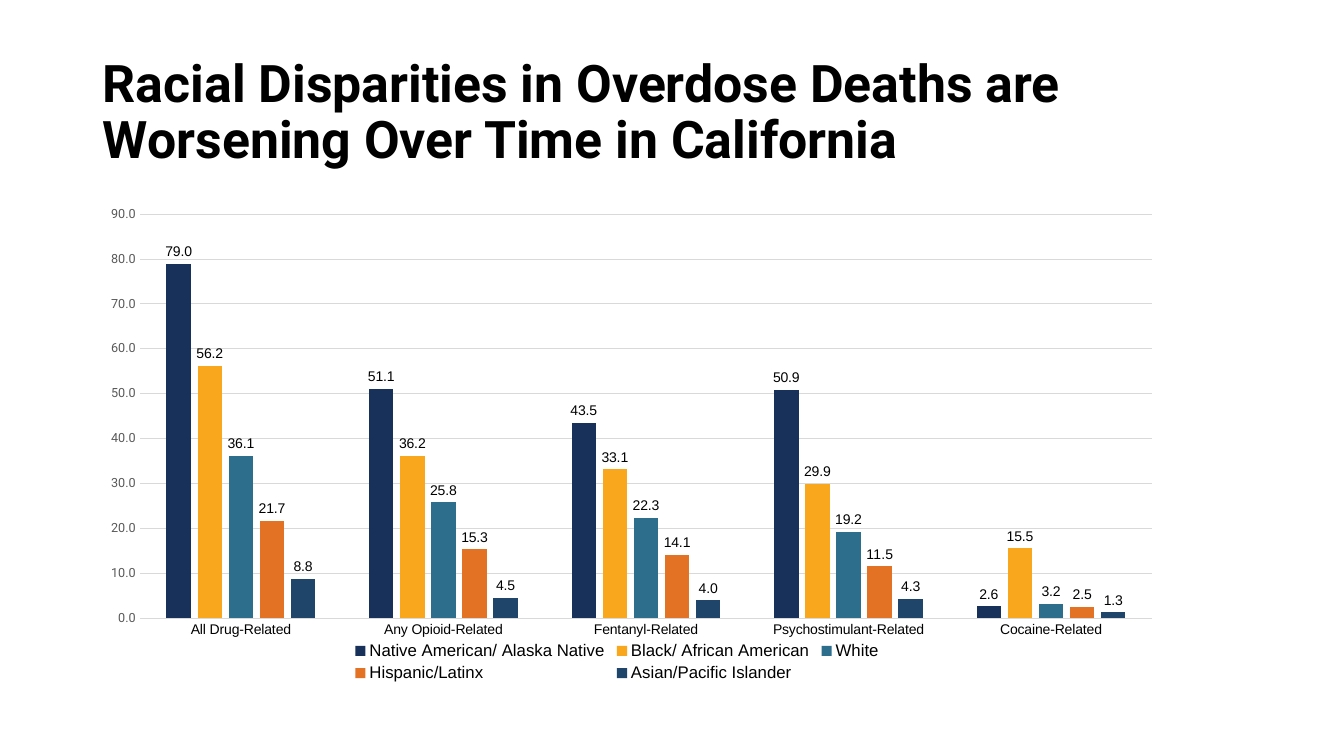
from dataclasses import dataclass

from lxml import etree
from pptx import Presentation
from pptx import util as u
from pptx.chart.data import CategoryChartData
from pptx.dml.color import RGBColor
from pptx.enum import chart as chart_enum
from pptx.enum import text
from pptx.oxml import ns


@dataclass(frozen=True)
class Theme:
    ink: str = "000000"
    muted: str = "595959"
    rule: str = "D9D9D9"
    heading_font: str = "Roboto"
    label_font: str = "Arial"
    title_size: float = 37
    legend_size: float = 12
    label_size: float = 10
    scale_size: float = 9
    rule_width: float = 0.75


THEME = Theme()
TITLE = "Racial Disparities in Overdose Deaths are Worsening Over Time in California"
CATEGORIES = ["All Drug-Related", "Any Opioid-Related", "Fentanyl-Related",
              "Psychostimulant-Related", "Cocaine-Related"]
# Group name, bar colour, death rate per category
GROUPS = [
    ("Native American/ Alaska Native", "17315A", (79, 51.1, 43.5, 50.9, 2.6)),
    ("Black/ African American", "F9A71C", (56.2, 36.2, 33.1, 29.9, 15.5)),
    ("White", "2D6E8D", (36.1, 25.8, 22.3, 19.2, 3.2)),
    ("Hispanic/Latinx", "E47225", (21.7, 15.3, 14.1, 11.5, 2.5)),
    ("Asian/Pacific Islander", "1F456B", (8.8, 4.5, 4, 4.3, 1.3)),
]


def style_font(font, size, name, color=THEME.ink, bold=False):
    font.size = u.Pt(size)
    font.name = name
    font.bold = bold
    font.color.rgb = RGBColor.from_string(color)


def style_rule(line):
    line.color.rgb = RGBColor.from_string(THEME.rule)
    line.width = u.Pt(THEME.rule_width)


def set_layout(parent, index, box, inner=False):
    """Place a chart part by fractions of the chart's width and height."""
    for old in parent.findall(ns.qn("c:layout")):
        parent.remove(old)
    layout = etree.Element(ns.qn("c:layout"))
    manual = etree.SubElement(layout, ns.qn("c:manualLayout"))
    settings = [("layoutTarget", "inner")] if inner else []
    settings += [("xMode", "edge"), ("yMode", "edge"), *zip("xywh", box)]
    for tag, value in settings:
        etree.SubElement(manual, ns.qn(f"c:{tag}")).set("val", str(value))
    parent.insert(index, layout)


def add_title(slide, left, top, width, height):
    title = slide.shapes.title
    title.left, title.top = u.Inches(left), u.Inches(top)
    title.width, title.height = u.Inches(width), u.Inches(height)
    frame = title.text_frame
    frame.text = TITLE
    frame.word_wrap = True
    frame.auto_size = text.MSO_AUTO_SIZE.NONE
    frame.vertical_anchor = text.MSO_ANCHOR.MIDDLE
    paragraph = frame.paragraphs[0]
    paragraph.alignment = text.PP_ALIGN.LEFT
    paragraph.line_spacing = 0.9
    style_font(paragraph.runs[0].font, THEME.title_size, THEME.heading_font, bold=True)


def format_axes(chart):
    for axis in (chart.category_axis, chart.value_axis):
        axis.major_tick_mark = axis.minor_tick_mark = chart_enum.XL_TICK_MARK.NONE
    category_axis, value_axis = chart.category_axis, chart.value_axis
    category_axis.has_major_gridlines = False
    style_rule(category_axis.format.line)
    style_font(category_axis.tick_labels.font, THEME.label_size, THEME.label_font)

    value_axis.minimum_scale, value_axis.maximum_scale = 0, 90
    value_axis.major_unit = 10
    value_axis.has_major_gridlines = True
    style_rule(value_axis.major_gridlines.format.line)
    value_axis.format.line.fill.background()
    value_axis.tick_labels.number_format = "0.0"
    value_axis.tick_labels.number_format_is_linked = False
    style_font(value_axis.tick_labels.font, THEME.scale_size, THEME.heading_font, THEME.muted)


def format_bars(plot):
    plot.gap_width, plot.overlap = 219, -27
    plot.vary_by_categories = False
    for series, (_, color, _) in zip(plot.series, GROUPS):
        series.format.fill.solid()
        series.format.fill.fore_color.rgb = RGBColor.from_string(color)
        series.invert_if_negative = False
        labels = series.data_labels
        labels.show_value = True
        labels.position = chart_enum.XL_LABEL_POSITION.OUTSIDE_END
        labels.number_format = "0.0"
        labels.number_format_is_linked = False
        style_font(labels.font, THEME.label_size, THEME.label_font)


def add_death_rate_chart(slide, left, top, width, height):
    data = CategoryChartData(number_format="0.0")
    data.categories = CATEGORIES
    for name, _, rates in GROUPS:
        data.add_series(name, rates)
    chart = slide.shapes.add_chart(
        chart_enum.XL_CHART_TYPE.COLUMN_CLUSTERED,
        u.Inches(left), u.Inches(top), u.Inches(width), u.Inches(height), data).chart
    chart.has_title = False
    style_font(chart.font, THEME.label_size, THEME.heading_font)
    format_axes(chart)
    format_bars(chart.plots[0])

    # Legend in two rows under the plot
    chart.has_legend = True
    legend = chart.legend
    legend.position = chart_enum.XL_LEGEND_POSITION.BOTTOM
    legend.include_in_layout = False
    style_font(legend.font, THEME.legend_size, THEME.label_font)

    plot_area = chart.plots[0]._element.getparent()
    set_layout(plot_area, 0, (0.055, 0.032, 0.944, 0.828), inner=True)
    set_layout(legend._element, 1, (0.25, 0.9, 0.5, 0.1))


def main():
    presentation = Presentation()
    presentation.slide_width = u.Inches(13.33)
    presentation.slide_height = u.Inches(7.5)
    slide = presentation.slides.add_slide(presentation.slide_layouts[5])
    add_title(slide, 0.92, 0.4, 11.5, 1.45)
    add_death_rate_chart(slide, 0.8, 1.97, 10.64, 4.84)
    presentation.save("out.pptx")


if __name__ == "__main__":
    main()
